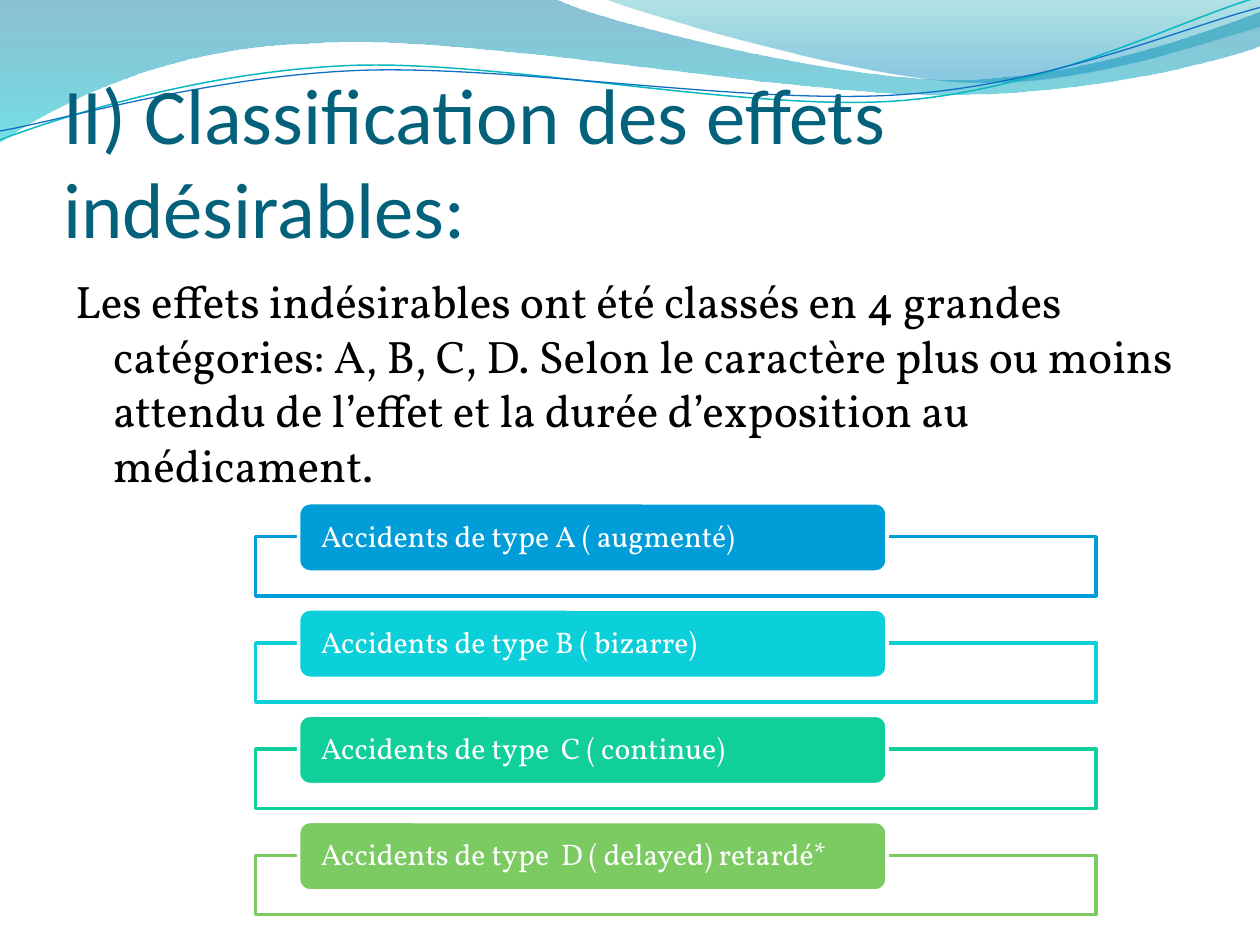
import math
from pptx import Presentation
from pptx import util as u
from pptx.dml.color import RGBColor
from pptx.enum import shapes as s, text as t
from pptx.oxml.ns import qn
from lxml import etree

TITLE = "II) Classification des effets indésirables:"
INTRO = ("Les effets indésirables ont été classés en 4 grandes catégories: "
         "A, B, C, D. Selon le caractère plus ou moins attendu de l’effet "
         "et la durée d’exposition au médicament.")
TYPES = [
    ("Accidents de type A ( augmenté)", "blue"),
    ("Accidents de type B ( bizarre)", "cyan"),
    ("Accidents de type  C ( continue)", "mint"),
    ("Accidents de type  D ( delayed) retardé*", "green"),
]
HEX = {
    "title": "04617B", "black": "000000", "white": "FFFFFF",
    "blue": "009DD9", "cyan": "0BD0D9", "mint": "10CF9B", "green": "7CCA62",
    "deep": "0074A1", "aqua": "00C6CF", "teal": "00A1A9", "sky": "008BBF",
    "curl": "0AB8BF", "navy": "0F6FC6",
}
# Each path is a start, then line ends (1 point) or curves (3 points).
# Gradient stops: position, colour, opacity in percent.
BANDS = [
    ([[(0, 0)], [(4.4, -.01)], [(4.76, .17), (6.64, .63), (7.58, .63)],
      [(8.53, .63), (9.58, .26), (10, .09)], [(10.01, .36)],
      [(9.83, .44), (8.7, .76), (7.46, .75)],
      [(6.22, .75), (3.82, .28), (2.57, .34)],
      [(1.29, .36), (.46, .83), (-.01, 1.13)]],
     [(0, "deep", 45), (1, "aqua", 55)]),
    ([[(4.79, -.01)], [(5.09, .11), (6.82, .62), (7.69, .65)],
      [(8.56, .69), (9.61, .32), (10, .21)], [(10, 0)]],
     [(0, "teal", 30), (.8, "sky", 45)]),
]
# Path, centre of rotation, colour, line width.
WAVES = [
    ([[(0, 1.11)], [(.48, .93), (1.58, .57), (2.77, .52)],
      [(3.95, .47), (5.93, .89), (7.13, .8)],
      [(8.33, .71), (9.38, .15), (9.98, -.02)]],
     (4.99, .57), "curl", .85),
    ([[(0, 1.04)], [(.47, .96), (1.64, .61), (2.83, .56)],
      [(4.03, .51), (5.97, .84), (7.17, .75)],
      [(8.36, .67), (9.41, .21), (10, .06)]],
     (5, .59), "navy", .75),
]
TILT = 2.7
TOP, LAST = 3.99, 6.52


def rgb(name):
    return RGBColor.from_string(HEX[name])


def outline(slide, path, closed):
    """Draw the path through all its points, then bend the curved parts."""
    pts = [(u.Inches(x), u.Inches(y)) for seg in path for x, y in seg]
    pen = slide.shapes.build_freeform(*pts[0])
    pen.add_line_segments(pts[1:], close=closed)
    shape = pen.convert_to_shape()
    shape.shadow.inherit = False
    lines = iter(list(shape.element.spPr.iter(qn("a:lnTo"))))
    for seg in path[1:]:
        parts = [next(lines) for _ in seg]
        if len(parts) == 3:
            curve = etree.Element(qn("a:cubicBezTo"))
            parts[0].addprevious(curve)
            for part in parts:
                curve.append(part[0])
                part.getparent().remove(part)
    return shape


def turn(path, mid, angle):
    """Rotate the path clockwise about mid by an angle in degrees."""
    cos, sin = math.cos(math.radians(angle)), math.sin(math.radians(angle))
    (a, b) = mid
    return [[(a + (x - a) * cos - (y - b) * sin,
              b + (x - a) * sin + (y - b) * cos) for x, y in seg]
            for seg in path]


def fade(shape, *rates):
    """Set the opacity, in percent, of the shape's colours in order."""
    for node, rate in zip(shape.element.spPr.iter(qn("a:srgbClr")), rates):
        etree.SubElement(node, qn("a:alpha")).set("val", str(rate * 1000))


def add_band(slide, path, stops):
    band = outline(slide, path, True)
    band.line.fill.background()
    band.fill.gradient()
    band.fill.gradient_angle = 270
    for stop, (pos, name, _) in zip(band.fill.gradient_stops, stops):
        stop.position = pos
        stop.color.rgb = rgb(name)
    fade(band, *(rate for _, _, rate in stops))


def add_wave(slide, path, mid, name, width):
    wave = outline(slide, turn(path, mid, TILT), False)
    wave.rotation = 360 - TILT
    wave.fill.background()
    wave.line.color.rgb = rgb(name)
    wave.line.width = u.Pt(width)


def add_box(slide, kind, at, fill, line):
    box = slide.shapes.add_shape(kind, *map(u.Inches, at))
    box.shadow.inherit = False
    box.fill.solid()
    box.fill.fore_color.rgb = rgb(fill)
    box.line.color.rgb = rgb(line)
    box.line.width = u.Pt(2)
    return box


def write(shape, words, size, color, font="Vollkorn", anchor="TOP",
          inset=(.1, .05, .1, .05), space=None, before=0, hang=0):
    frame = shape.text_frame
    frame.word_wrap = True
    frame.auto_size = t.MSO_AUTO_SIZE.NONE
    frame.vertical_anchor = t.MSO_ANCHOR[anchor]
    (frame.margin_left, frame.margin_top,
     frame.margin_right, frame.margin_bottom) = map(u.Inches, inset)
    para = frame.paragraphs[0]
    para.alignment = t.PP_ALIGN.LEFT
    para.line_spacing = space
    para.space_before = u.Pt(before)
    if hang:
        props = para._p.get_or_add_pPr()
        props.set("marL", str(u.Inches(hang)))
        props.set("indent", str(-u.Inches(hang)))
    run = para.add_run()
    run.text = words
    run.font.size = u.Pt(size)
    run.font.name = font
    run.font.color.rgb = rgb(color)


def main():
    deck = Presentation()
    deck.slide_width, deck.slide_height = u.Inches(10), u.Inches(7.5)
    slide = deck.slides.add_slide(deck.slide_layouts[5])

    for band in BANDS:
        add_band(slide, *band)
    for wave in WAVES:
        add_wave(slide, *wave)

    title = slide.shapes.title
    title.left, title.top, title.width, title.height = map(
        u.Inches, (.5, .77, 9, 1.25))
    write(title, TITLE, 45, "title", font="Calibri", anchor="BOTTOM",
          inset=(0, .05, 0, 0))
    title.element.getparent().append(title.element)  # in front of the waves

    intro = slide.shapes.add_textbox(*map(u.Inches, (.5, 2.12, 9, 4.8)))
    write(intro, INTRO, 26, "black", before=5.2, hang=.3)

    kinds = s.MSO_SHAPE
    pitch = (LAST - TOP) / (len(TYPES) - 1)
    for i, (words, name) in enumerate(TYPES):
        top = TOP + i * pitch
        frame = add_box(slide, kinds.RECTANGLE, (2.03, top + .27, 6.67, .47),
                        "white", name)
        fade(frame, 90)
        label = add_box(slide, kinds.ROUNDED_RECTANGLE,
                        (2.37, top, 4.67, .55), name, "white")
        write(label, words, 17, "white", anchor="MIDDLE",
              inset=(.15, 0, .15, 0), space=.9)

    deck.save("out.pptx")


if __name__ == "__main__":
    main()
